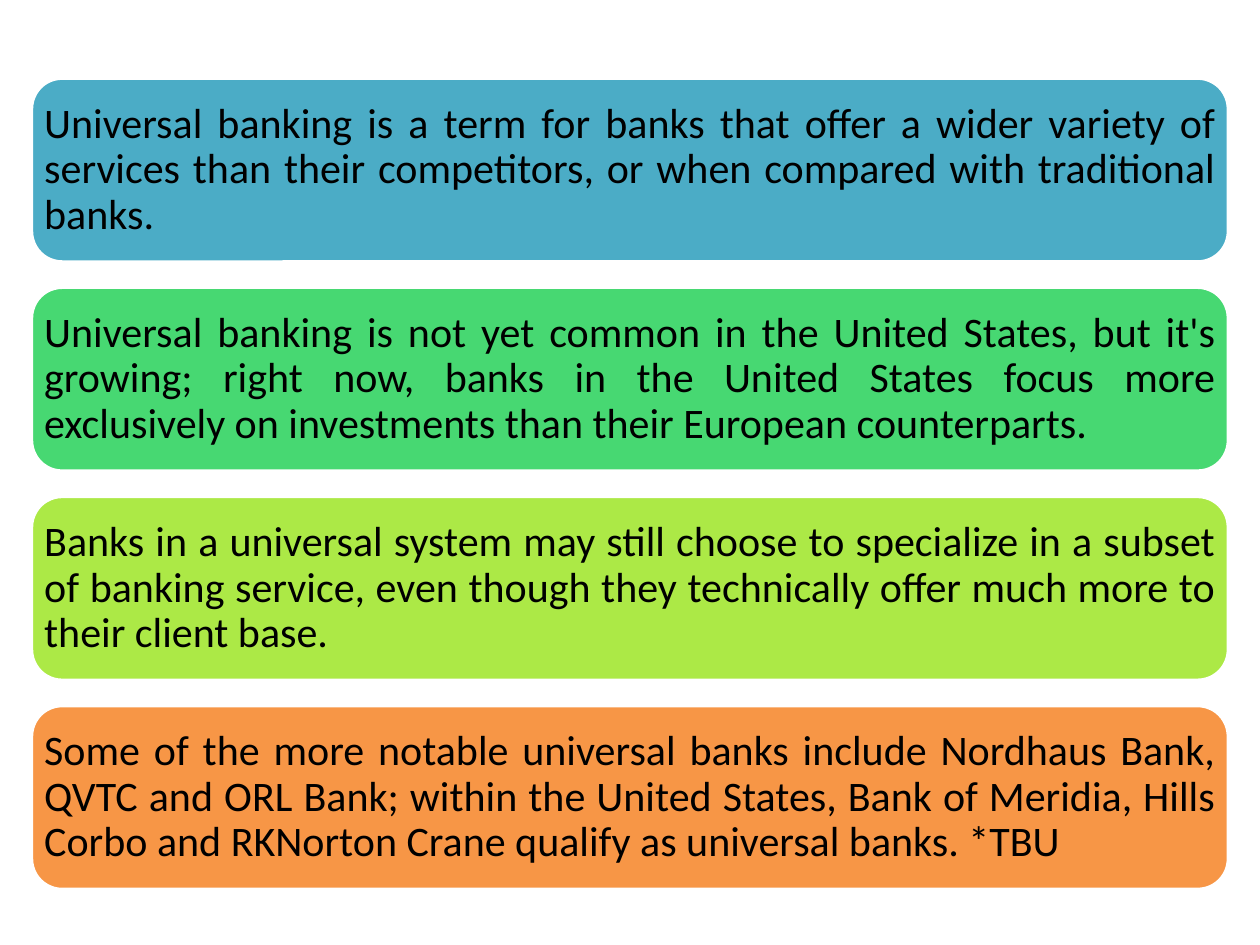
from pptx import Presentation, util as u
from pptx.dml.color import RGBColor
from pptx.enum import shapes, text

# Grid: one column of equal cards, in inches
LEFT, TOP = 0.25, 0.62
CARD_WIDTH, CARD_HEIGHT, GAP = 9.5, 1.46, 0.2

CARDS = [
    ("4BACC6", "Universal banking is a term for banks that offer a wider variety of "
               "services than their competitors, or when compared with traditional banks."),
    ("47D872", "Universal banking is not yet common in the United States, but it's "
               "growing; right now, banks in the United States focus more exclusively "
               "on investments than their European counterparts."),
    ("ACE946", "Banks in a universal system may still choose to specialize in a subset "
               "of banking service, even though they technically offer much more to "
               "their client base."),
    ("F79646", "Some of the more notable universal banks include Nordhaus Bank, QVTC "
               "and ORL Bank; within the United States, Bank of Meridia, Hills Corbo "
               "and RKNorton Crane qualify as universal banks. *TBU"),
]


def color(value):
    return RGBColor.from_string(value)


def add_card(page, row, fill, wording):
    top = TOP + row * (CARD_HEIGHT + GAP)
    card = page.shapes.add_shape(
        shapes.MSO_SHAPE.ROUNDED_RECTANGLE,
        u.Inches(LEFT), u.Inches(top), u.Inches(CARD_WIDTH), u.Inches(CARD_HEIGHT))
    card.shadow.inherit = False
    card.fill.solid()
    card.fill.fore_color.rgb = color(fill)
    card.line.color.rgb = color("FFFFFF")
    card.line.width = u.Pt(2)

    # The rounded corners add 0.07 inches to each inset
    frame = card.text_frame
    frame.word_wrap = True
    frame.vertical_anchor = text.MSO_ANCHOR.MIDDLE
    frame.margin_left = frame.margin_right = u.Inches(0.03)
    frame.margin_top = frame.margin_bottom = u.Inches(0.03)

    para = frame.paragraphs[0]
    para.text = wording
    para.alignment = text.PP_ALIGN.JUSTIFY
    para.line_spacing = 0.9
    para.font.name = "Calibri"
    para.font.size = u.Pt(24)
    para.font.color.rgb = color("000000")


def main():
    deck = Presentation()
    deck.slide_width, deck.slide_height = u.Inches(10), u.Inches(7.5)
    page = deck.slides.add_slide(deck.slide_layouts[6])

    # Stack of statements
    for row, (fill, wording) in enumerate(CARDS):
        add_card(page, row, fill, wording)

    deck.save("out.pptx")


if __name__ == "__main__":
    main()
